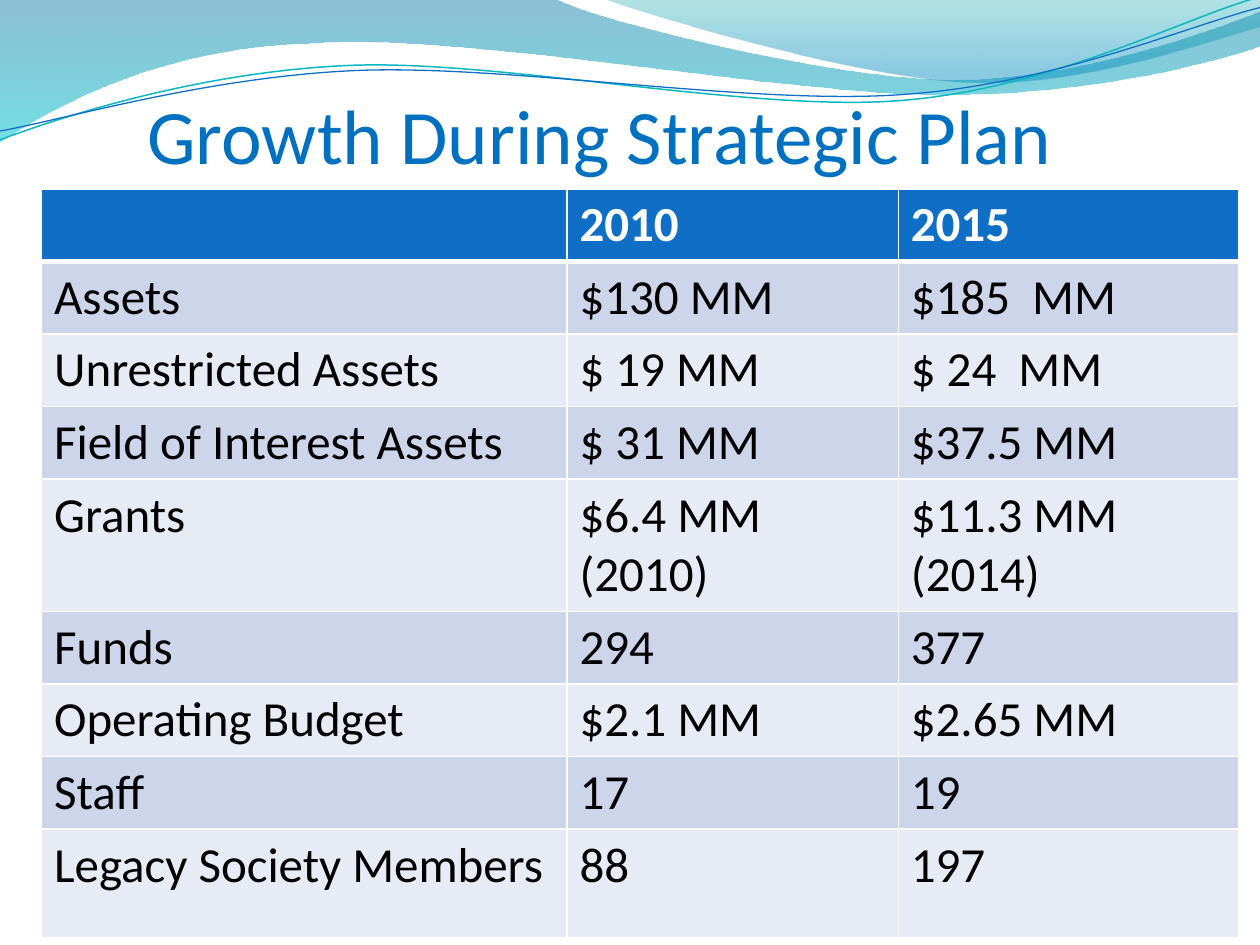
from lxml.etree import SubElement
from pptx import Presentation
from pptx.dml.color import RGBColor
from pptx.enum.text import MSO_ANCHOR, MSO_AUTO_SIZE, PP_ALIGN
from pptx.oxml.ns import qn
from pptx.util import Inches, Pt

FONT = "Calibri"
COLORS = {
    "title": "0070C0", "header": "0F6FC6", "odd": "CCD5EA", "even": "E7EBF5",
    "white": "FFFFFF", "text": "000000", "teal_line": "0AB8BF",
    "wave_top": "0074A1", "wave_bottom": "00C6CF",
    "crest_top": "00A1A9", "crest_bottom": "008BBF",
}
ROWS = [
    ("", "2010", "2015"),
    ("Assets", "$130 MM", "$185  MM"),
    ("Unrestricted Assets", "$ 19 MM", "$ 24  MM"),
    ("Field of Interest Assets", "$ 31 MM", "$37.5 MM"),
    ("Grants", "$6.4 MM (2010)", "$11.3 MM (2014)"),
    ("Funds", "294", "377"),
    ("Operating Budget", "$2.1 MM", "$2.65 MM"),
    ("Staff", "17", "19"),
    ("Legacy Society Members", "88", "197"),
]
COLUMN_WIDTHS = (4.17, 2.63, 2.7)
ROW_HEIGHT, LAST_ROW_HEIGHT = 0.5, 0.86

# Each outline is a start point, then lines (2 numbers) or Bezier curves (6)
WAVE = [(0, 0), (4.4, -0.01), (4.76, 0.17, 6.64, 0.63, 7.58, 0.63),
        (8.53, 0.63, 9.58, 0.26, 10, 0.09), (10.01, 0.36),
        (9.83, 0.44, 8.7, 0.76, 7.46, 0.75), (6.22, 0.75, 3.82, 0.28, 2.57, 0.34),
        (1.29, 0.36, 0.46, 0.83, -0.01, 1.13), (0, 0)]
CREST = [(4.79, -0.01), (5.09, 0.11, 6.82, 0.62, 7.69, 0.65),
         (8.56, 0.69, 9.61, 0.32, 10, 0.21), (10, 0), (4.79, -0.01)]
TEAL_LINE = [(0, 1.11), (0.48, 0.93, 1.58, 0.57, 2.77, 0.52),
             (3.95, 0.47, 5.93, 0.89, 7.13, 0.8), (8.33, 0.71, 9.38, 0.15, 9.98, -0.02)]
BLUE_LINE = [(0, 1.04), (0.47, 0.96, 1.64, 0.61, 2.83, 0.56),
             (4.03, 0.51, 5.97, 0.84, 7.17, 0.75), (8.36, 0.67, 9.41, 0.21, 10, 0.06)]


def rgb(name):
    return RGBColor.from_string(COLORS[name])


def add_outline(page, outline, close):
    """Build a freeform, then join each three curve points into one Bezier."""
    points = [(Inches(x), Inches(y))
              for step in outline for x, y in zip(step[::2], step[1::2])]
    builder = page.shapes.build_freeform(*points[0])
    builder.add_line_segments(points[1:], close=close)
    shape = builder.convert_to_shape()
    shape.shadow.inherit = False
    segments = iter(list(shape.element.iter(qn("a:lnTo"))))
    for step in outline[1:]:
        first = next(segments)
        if len(step) == 6:
            first.tag = qn("a:cubicBezTo")
            for _ in range(2):
                segment = next(segments)
                first.append(segment[0])
                segment.getparent().remove(segment)
    return shape


def add_wave(page, outline, stops):
    """Closed wave with a top-to-bottom gradient of (position, color, opacity %)."""
    shape = add_outline(page, outline, True)
    shape.line.fill.background()
    shape.fill.gradient()
    shape.fill.gradient_angle = 270
    for stop, (position, color, _) in zip(shape.fill.gradient_stops, stops):
        stop.position = position
        stop.color.rgb = rgb(color)
    for node, (_, _, opacity) in zip(shape.element.iter(qn("a:srgbClr")), stops):
        SubElement(node, qn("a:alpha"), val=str(opacity * 1000))
    return shape


def add_wave_line(page, outline, color, width):
    shape = add_outline(page, outline, False)
    shape.fill.background()
    shape.line.color.rgb = rgb(color)
    shape.line.width = Pt(width)
    return shape


def move_to_master(master, shapes):
    """Place the shapes behind the placeholders of the master."""
    tree = master.placeholders[0].element.getparent()
    next_id = 1 + max(shape.shape_id for shape in master.shapes)
    for i, shape in enumerate(shapes):
        next(shape.element.iter(qn("p:cNvPr"))).set("id", str(next_id + i))
        tree.insert(2 + i, shape.element)


def add_text(para, text, size, color, bold=False):
    span = para.add_run()
    span.text = text
    span.font.name = FONT
    span.font.size = Pt(size)
    span.font.bold = bold
    span.font.color.rgb = rgb(color)


def set_title(page, text):
    title = page.shapes.title
    title.left, title.top = Inches(1.17), Inches(0.83)
    title.width, title.height = Inches(8.22), Inches(0.6)
    frame = title.text_frame
    frame.auto_size = MSO_AUTO_SIZE.NONE
    frame.word_wrap = True
    frame.vertical_anchor = MSO_ANCHOR.BOTTOM
    frame.margin_left = frame.margin_right = frame.margin_bottom = 0
    frame.margin_top = Inches(0.05)
    frame.paragraphs[0].alignment = PP_ALIGN.LEFT
    add_text(frame.paragraphs[0], text, 44, "title")


def set_borders(cell, top, bottom):
    props = cell._tc.get_or_add_tcPr()
    for side, width in (("L", 1), ("R", 1), ("T", top), ("B", bottom)):
        line = SubElement(props, qn(f"a:ln{side}"), w=str(Pt(width)))
        fill = SubElement(line, qn("a:solidFill"))
        SubElement(fill, qn("a:srgbClr"), val=COLORS["white"])


def add_growth_table(page):
    height = ROW_HEIGHT * (len(ROWS) - 1) + LAST_ROW_HEIGHT
    table = page.shapes.add_table(
        len(ROWS), len(COLUMN_WIDTHS), Inches(0.33), Inches(1.5),
        Inches(sum(COLUMN_WIDTHS)), Inches(height)).table
    for column, width in zip(table.columns, COLUMN_WIDTHS):
        column.width = Inches(width)
    for r, values in enumerate(ROWS):
        is_last = r == len(ROWS) - 1
        table.rows[r].height = Inches(LAST_ROW_HEIGHT if is_last else ROW_HEIGHT)
        header = r == 0
        fill = "header" if header else ("odd" if r % 2 else "even")
        for c, value in enumerate(values):
            cell = table.cell(r, c)
            set_borders(cell, 3 if r == 1 else 1, 3 if header else 1)
            cell.fill.solid()
            cell.fill.fore_color.rgb = rgb(fill)
            if value:
                add_text(cell.text_frame.paragraphs[0], value, 28,
                         "white" if header else "text", header)


def main():
    deck = Presentation()
    deck.slide_width, deck.slide_height = Inches(10), Inches(7.5)
    page = deck.slides.add_slide(deck.slide_layouts[5])

    # Wave decoration along the top, kept on the master
    move_to_master(deck.slide_master, [
        add_wave(page, WAVE, [(0, "wave_top", 45), (1, "wave_bottom", 55)]),
        add_wave(page, CREST, [(0, "crest_top", 30), (0.8, "crest_bottom", 45)]),
        add_wave_line(page, TEAL_LINE, "teal_line", 0.85),
        add_wave_line(page, BLUE_LINE, "header", 0.75),
    ])

    # Title and table
    set_title(page, "Growth During Strategic Plan")
    add_growth_table(page)
    deck.save("out.pptx")


if __name__ == "__main__":
    main()
